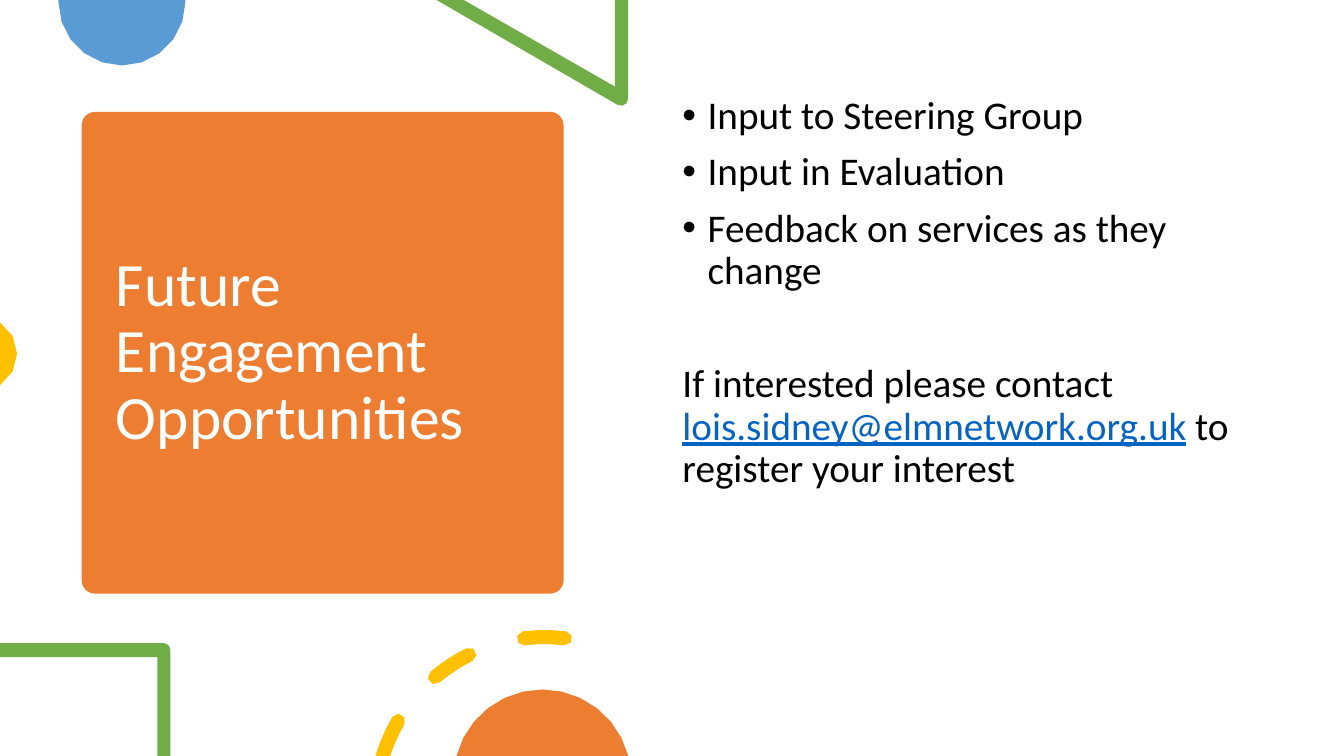
from math import ceil, cos, radians, sin

from lxml import etree
from pptx import Presentation
from pptx.dml.color import RGBColor
from pptx.enum import shapes, text
from pptx.oxml.ns import qn
from pptx.util import Inches, Pt

ORANGE, BLUE, GREEN, GOLD = "ED7D31", "5B9BD5", "70AD47", "FFC000"

deck = Presentation()
deck.slide_width, deck.slide_height = Inches(13.33), Inches(7.5)
slide = deck.slides.add_slide(deck.slide_layouts[5])


def arc(x, y, r, start, end):
    """Points on a circle; angles in degrees, clockwise from the top."""
    steps = max(3, ceil(abs(radians(end - start)) * r / 0.2))
    turns = [radians(start + (end - start) * i / steps) for i in range(steps + 1)]
    return [(x + r * sin(t), y - r * cos(t)) for t in turns]


def write(para, words, size=28, color="000000", line=False):
    run = para.add_run()
    run.text = words
    run.font.name, run.font.size = "Calibri", Pt(size)
    run.font.color.rgb = RGBColor.from_string(color)
    run.font.underline = line
    para.line_spacing = 0.9
    para.alignment = text.PP_ALIGN.LEFT


# Outlines, each cut off at the slide's edge
dot = arc(1.21, 0.02, 0.63, 90, 270) + [(0.58, 0), (1.84, 0)]
wedge = [(4.33, 0), *arc(6.16, 0.98, 0.07, 210, 90),
         (6.23, 0), (6.1, 0), (6.1, 0.86), (4.6, 0)]
bead = arc(-0.2, 3.51, 0.37, 33, 147)
frame = [(0, 6.38), *arc(1.62, 6.45, 0.07, 0, 90),
         (1.69, 7.5), (1.56, 7.5), (1.56, 6.52), (0, 6.52)]
disc = arc(5.38, 7.72, 0.88, -75.5, 75.5)

# Dashed ring: round-ended dashes, the last one cut by the bottom edge
hub, mid, half = (5.4, 8), 1.68, 0.07
ring = []
for i in range(3):
    left, right = -33.3 * i - 7, -33.3 * i + 7
    cut = i == 2
    head, tail = [arc(*hub, mid, a, a)[0] for a in (right, left)]
    dash = arc(*hub, mid + half, -73.4 if cut else left, right)
    dash += arc(*head, half, right, right + 180)[1:-1]
    dash += arc(*hub, mid - half, right, -71.9 if cut else left)
    if not cut:
        dash += arc(*tail, half, left + 180, left + 360)[1:-1]
    ring.append(dash)

panel = slide.shapes.add_shape(
    shapes.MSO_SHAPE.ROUNDED_RECTANGLE,
    Inches(0.81), Inches(1.11), Inches(4.78), Inches(4.78))
panel.adjustments[0] = 0.028
filled = [(panel, ORANGE)]
for loops, color in (([dot], BLUE), ([wedge], GREEN), ([bead], GOLD),
                     ([frame], GREEN), (ring, GOLD), ([disc], ORANGE)):
    pen = None
    for loop in loops:
        first, *rest = [(Inches(x), Inches(y)) for x, y in loop]
        if pen:
            pen.move_to(*first)
        else:
            pen = slide.shapes.build_freeform(*first, scale=1.0)
        pen.add_line_segments(rest, close=True)
    filled.append((pen.convert_to_shape(), color))
for shape, color in filled:
    shape.shadow.inherit = False
    shape.fill.solid()
    shape.fill.fore_color.rgb = RGBColor.from_string(color)
    shape.line.fill.background()

title = slide.shapes.title
title.left, title.top = Inches(1.05), Inches(1.22)
title.width, title.height = Inches(4.31), Inches(4.56)
box = title.text_frame
box.word_wrap, box.auto_size = True, text.MSO_AUTO_SIZE.NONE
box.vertical_anchor = text.MSO_ANCHOR.MIDDLE
write(box.paragraphs[0], "Future Engagement Opportunities", size=44, color="FFFFFF")
panel._element.addnext(title._element)

body = slide.shapes.add_textbox(
    Inches(6.67), Inches(0.9), Inches(5.75), Inches(5.35)).text_frame
body.word_wrap = True
para = body.paragraphs[0]
for point in ("Input to Steering Group", "Input in Evaluation",
              "Feedback on services as they change"):
    write(para, point)
    para.space_before = Pt(10)
    props = para._p.get_or_add_pPr()
    props.set("marL", str(Inches(0.25)))
    props.set("indent", str(-Inches(0.25)))
    etree.SubElement(props, qn("a:buFont")).set("typeface", "Arial")
    etree.SubElement(props, qn("a:buChar")).set("char", "•")
    para = body.add_paragraph()

para.space_before = Pt(50.5)
write(para, "If interested please contact ")
write(para, "lois.sidney@elmnetwork.org.uk", color="0563C1", line=True)
write(para, " to register your interest")

deck.save("out.pptx")
